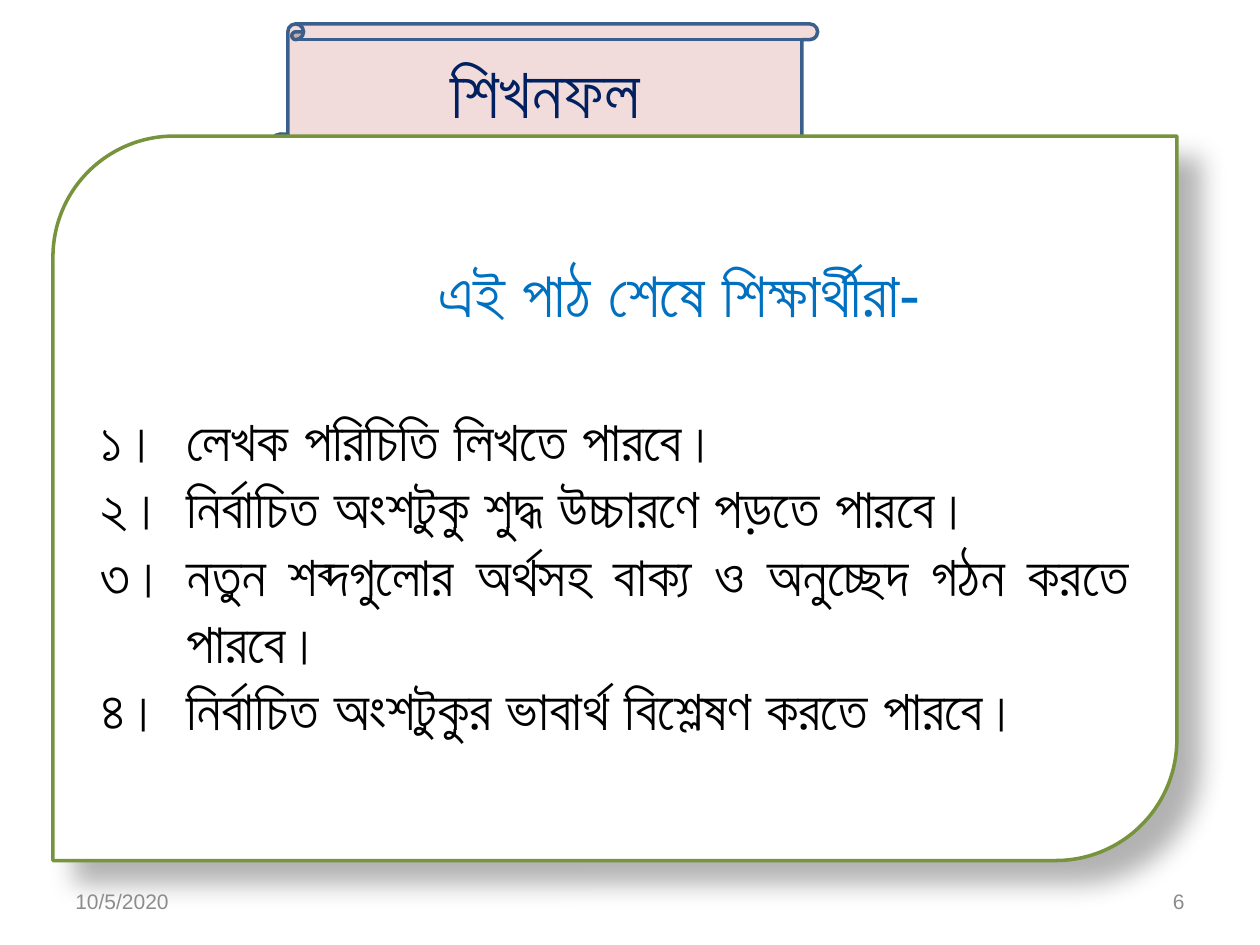
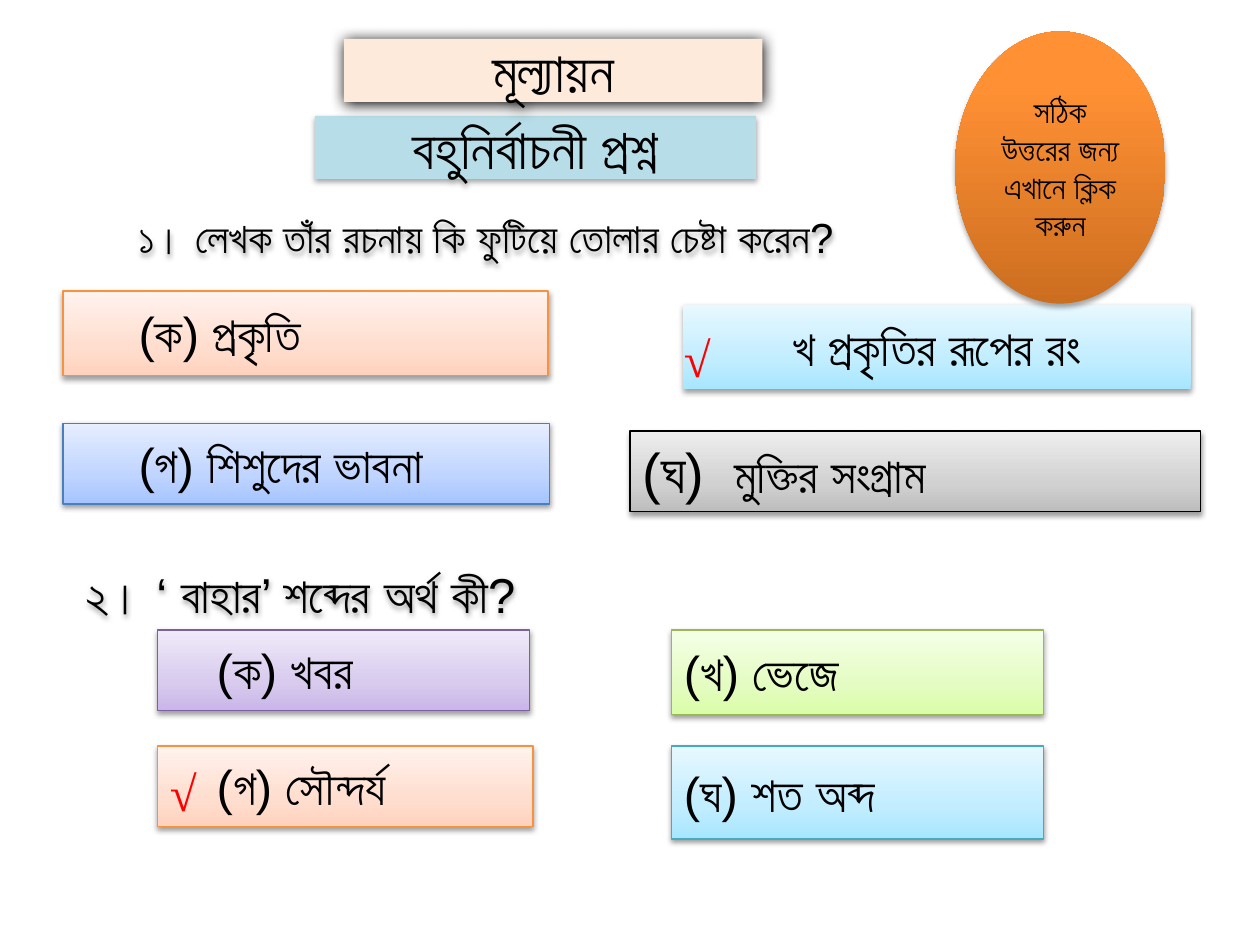
"""Build two Bengali lesson slides: learning outcomes and a multiple-choice quiz."""
from dataclasses import dataclass
from typing import Optional, Union

from lxml import etree
from pptx import Presentation
from pptx.dml.color import RGBColor
from pptx.enum.shapes import MSO_SHAPE
from pptx.enum.text import MSO_ANCHOR, PP_ALIGN
from pptx.oxml.ns import qn
from pptx.util import Inches, Pt

RECT, OVAL = MSO_SHAPE.RECTANGLE, MSO_SHAPE.OVAL
SCROLL, CARD = MSO_SHAPE.VERTICAL_SCROLL, MSO_SHAPE.ROUND_2_DIAG_RECTANGLE
LEFT, CENTER, RIGHT, JUSTIFY = PP_ALIGN.LEFT, PP_ALIGN.CENTER, PP_ALIGN.RIGHT, PP_ALIGN.JUSTIFY
TOP, MIDDLE = MSO_ANCHOR.TOP, MSO_ANCHOR.MIDDLE


@dataclass(frozen=True)
class Gradient:
    """Colours running from the bottom edge up, with the middle stop in percent."""
    bottom: str
    middle: str
    top: str
    stop: int = 35


@dataclass(frozen=True)
class Shadow:
    """Black outer shadow: opacity in percent, blur and distance in points, angle."""
    alpha: int
    blur: float
    dist: float
    angle: int = 90


@dataclass(frozen=True)
class Theme:
    """Colours, fonts, type sizes and effects used on both slides."""
    font: str = "Arial"
    tick_font: str = "Times New Roman"
    black: str = "000000"
    white: str = "FFFFFF"
    navy: str = "002060"
    blue: str = "0070C0"
    red: str = "FF0000"
    grey: str = "8C8C8C"
    scroll_fill: str = "F2DCDB"
    scroll_line: str = "3A5F8C"
    card_line: str = "77933C"
    peach: str = "FDEADA"
    teal: str = "B7DEE8"
    orange_line: str = "F69240"
    blue_line: str = "4B7EBC"
    purple_line: str = "7D60A0"
    green_line: str = "98B955"
    aqua_line: str = "46AAC5"
    orange: Gradient = Gradient("FFD2BD", "FFDED0", "FFF2ED")
    aqua: Gradient = Gradient("A7E6FF", "C1EDFF", "E7F8FF")
    sky: Gradient = Gradient("A4C4FF", "BFD4FF", "E6EEFF")
    silver: Gradient = Gradient("BDBDBD", "D1D1D1", "EEEEEE")
    purple: Gradient = Gradient("C9B5E8", "D8CBEE", "F0EAF9")
    green: Gradient = Gradient("DAFDA7", "E4FCC2", "F5FFE7")
    button: Gradient = Gradient("CC6E20", "FF9034", "FF9136", 80)
    soft: Shadow = Shadow(38, 3.1, 1.6)
    low: Shadow = Shadow(35, 3.1, 1.8)
    glow: Shadow = Shadow(100, 8.5, 1)
    deep: Shadow = Shadow(30, 15, 18, 45)
    title: int = 40
    lead: int = 36
    body: int = 32
    option: int = 28
    question: int = 24
    small: int = 18
    footer: int = 12


T = Theme()


@dataclass(frozen=True)
class Para:
    """A paragraph, with an optional marker hanging to its left."""
    text: str
    size: int
    color: str = T.black
    align: PP_ALIGN = LEFT
    bold: bool = False
    font: str = T.font
    marker: str = ""
    marker_size: int = T.body
    indent: float = 0
    after: float = 0


@dataclass(frozen=True)
class Box:
    """A shape or, without a kind, a text box; lengths are in inches."""
    left: float
    top: float
    width: float
    height: float
    paras: tuple[Para, ...]
    kind: Optional[MSO_SHAPE] = RECT
    fill: Union[str, Gradient, None] = None
    line: Optional[str] = None
    line_width: float = 0.75
    shadow: Optional[Shadow] = None
    inset: float = 0.1
    anchor: MSO_ANCHOR = MIDDLE
    adjust: tuple[float, ...] = ()


def rgb(value: str) -> RGBColor:
    """Turn a hex string into a colour."""
    return RGBColor.from_string(value)


def paint(shape, fill: Union[str, Gradient, None]) -> None:
    """Fill a shape with a plain colour, a vertical gradient or nothing."""
    if fill is None:
        shape.fill.background()
    elif isinstance(fill, str):
        shape.fill.solid()
        shape.fill.fore_color.rgb = rgb(fill)
    else:
        shape.fill.gradient()
        shape.fill.gradient_angle = 90
        stops = shape._element.spPr.find(".//" + qn("a:gsLst"))
        for old in list(stops):
            stops.remove(old)
        for pos, color in ((0, fill.bottom), (fill.stop, fill.middle), (100, fill.top)):
            gs = etree.SubElement(stops, qn("a:gs"), pos=str(pos * 1000))
            etree.SubElement(gs, qn("a:srgbClr"), val=color)


def cast_shadow(shape, shadow: Optional[Shadow]) -> None:
    """Replace the inherited shadow with the given one, if any."""
    shape.shadow.inherit = False
    if shadow:
        effects = shape._element.spPr.find(qn("a:effectLst"))
        outer = etree.SubElement(
            effects, qn("a:outerShdw"), blurRad=str(Pt(shadow.blur)), dist=str(Pt(shadow.dist)),
            dir=str(shadow.angle * 60000), algn="ctr", rotWithShape="0")
        color = etree.SubElement(outer, qn("a:srgbClr"), val=T.black)
        etree.SubElement(color, qn("a:alpha"), val=str(shadow.alpha * 1000))


def format_run(r, para: Para, size: int) -> None:
    """Apply size, colour and font to a run, complex script included."""
    r.font.size = Pt(size)
    r.font.bold = para.bold
    r.font.color.rgb = rgb(para.color)
    r.font.name = para.font
    etree.SubElement(r.font._element, qn("a:cs"), typeface=para.font)


def write(p, para: Para) -> None:
    """Write one paragraph with its marker, indent and spacing."""
    p.alignment = para.align
    if para.after:
        p.space_after = Pt(para.after)
    if para.indent:
        p_pr = p._p.get_or_add_pPr()
        p_pr.set("marL", str(Inches(para.indent)))
        p_pr.set("indent", str(Inches(-para.indent if para.marker else 0)))
    if para.marker:
        p.text = para.marker + "\t"
        format_run(p.runs[0], para, para.marker_size)
    r = p.add_run()
    r.text = para.text
    format_run(r, para, para.size)


def draw(s, box: Box) -> None:
    """Draw a box and its text on a slide."""
    place = [Inches(v) for v in (box.left, box.top, box.width, box.height)]
    if box.kind is None:
        sp = s.shapes.add_textbox(*place)
    else:
        sp = s.shapes.add_shape(box.kind, *place)
        for i, value in enumerate(box.adjust):
            sp.adjustments[i] = value
    paint(sp, box.fill)
    if box.line:
        sp.line.color.rgb = rgb(box.line)
        sp.line.width = Pt(box.line_width)
    else:
        sp.line.fill.background()
    cast_shadow(sp, box.shadow)
    tf = sp.text_frame
    tf.word_wrap = True
    tf.vertical_anchor = box.anchor
    tf.margin_left = Inches(box.inset)
    for i, para in enumerate(box.paras):
        write(tf.add_paragraph() if i else tf.paragraphs[0], para)


def footer(left: float, text: str, align: PP_ALIGN) -> Box:
    """Describe a footer field."""
    return Box(left, 6.95, 2.33, 0.4, (Para(text, T.footer, T.grey, align),), None)


def question(left: float, top: float, text: str, size: int) -> Box:
    """Describe a question line with a soft text shadow."""
    return Box(left, top, 7.67, 0.92, (Para(text, size),), None, shadow=T.soft)


def option(left: float, top: float, width: float, height: float, para: Para,
           fill: Gradient, line: Optional[str], inset: float = 0.1) -> Box:
    """Describe an answer option."""
    return Box(left, top, width, height, (para,), fill=fill, line=line,
               shadow=T.soft, inset=inset)


def banner(left: float, top: float, width: float, text: str, fill: str, shadow: Shadow) -> Box:
    """Describe a heading band."""
    return Box(left, top, width, 0.5, (Para(text, T.body, align=CENTER),),
               fill=fill, shadow=shadow)


def tick(left: float, top: float) -> Box:
    """Describe the mark beside a right answer."""
    mark = Para("√", T.option, T.red, bold=True, font=T.tick_font)
    return Box(left, top, 0.58, 0.57, (mark,), None, anchor=TOP)


OUTCOMES = (
    ("১।", "লেখক পরিচিতি লিখতে পারবে।"),
    ("২।", "নির্বাচিত অংশটুকু শুদ্ধ উচ্চারণে পড়তে পারবে।"),
    ("৩।", "নতুন শব্দগুলোর অর্থসহ বাক্য ও অনুচ্ছেদ গঠন করতে পারবে।"),
    ("৪।", "নির্বাচিত অংশটুকুর ভাবার্থ বিশ্লেষণ করতে পারবে।"),
)
LEAD = Para("এই পাঠ শেষে শিক্ষার্থীরা-", T.lead, T.blue, indent=2.68, after=43)
OUTCOME_PARAS = tuple(Para(text, T.body, align=JUSTIFY, marker=number, indent=0.68)
                      for number, text in OUTCOMES)

OUTCOMES_SLIDE = (
    Box(2.16, 0.19, 4.33, 1, (Para("শিখনফল", T.title, T.navy, CENTER, True),),
        SCROLL, T.scroll_fill, T.scroll_line, 2),
    Box(0.42, 1.08, 8.92, 5.75, (LEAD, *OUTCOME_PARAS), CARD, T.white, T.card_line, 2,
        T.deep, adjust=(0.167, 0)),
    footer(7.17, "6", RIGHT),
    footer(0.5, "10/5/2020", LEFT),
)

QUIZ_SLIDE = (
    question(1, 1.42, "১। লেখক তাঁর রচনায় কি ফুটিয়ে তোলার চেষ্টা করেন?", T.question),
    option(0.5, 2.31, 3.85, 0.67, Para("(ক) প্রকৃতি", T.option), T.orange, T.orange_line, 0.6),
    option(5.42, 2.42, 4.03, 0.67, Para("খ প্রকৃতির রূপের রং", T.option, align=CENTER),
           T.aqua, None),
    option(0.5, 3.36, 3.86, 0.64, Para("(গ) শিশুদের ভাবনা", T.option), T.sky, T.blue_line, 0.6),
    option(5, 3.42, 4.53, 0.64,
           Para("মুক্তির সংগ্রাম", T.option, marker="(ঘ)", indent=0.73), T.silver, T.black),
    banner(2.5, 0.92, 3.5, "বহুনির্বাচনী প্রশ্ন", T.teal, T.low),
    question(0.58, 4.25, "২। ‘ বাহার’ শব্দের অর্থ কী?", T.option),
    option(1.25, 5, 2.95, 0.64, Para("(ক) খবর", T.option), T.purple, T.purple_line, 0.47),
    option(5.33, 5.92, 2.95, 0.74, Para("(ঘ) শত অব্দ", T.option), T.aqua, T.aqua_line),
    option(1.25, 5.92, 2.98, 0.64, Para("(গ) সৌন্দর্য", T.option), T.orange, T.orange_line, 0.47),
    option(5.33, 5, 2.95, 0.67, Para("(খ) ভেজে", T.option), T.green, T.green_line),
    banner(2.73, 0.31, 3.32, "মূল্যায়ন", T.peach, T.glow),
    tick(5.33, 2.56),
    Box(7.58, 0.25, 1.67, 2.16,
        (Para("সঠিক উত্তরের জন্য এখানে ক্লিক করুন", T.small, align=CENTER),),
        OVAL, T.button, shadow=T.low),
    tick(1.25, 6),
)


def main() -> None:
    """Build and save the presentation."""
    prs = Presentation()
    prs.slide_width, prs.slide_height = Inches(10), Inches(7.5)
    for boxes in (OUTCOMES_SLIDE, QUIZ_SLIDE):
        s = prs.slides.add_slide(prs.slide_layouts[6])
        for box in boxes:
            draw(s, box)
    prs.save("out.pptx")


if __name__ == "__main__":
    main()
